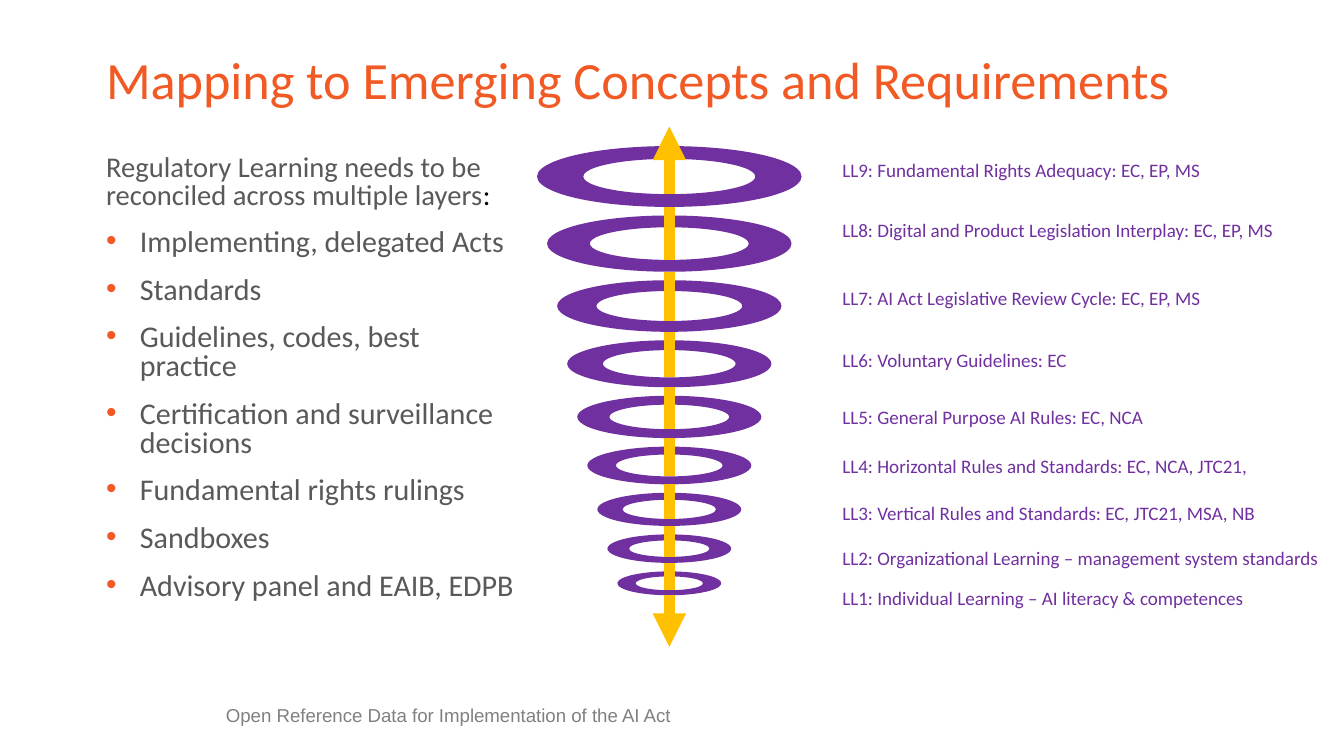
from lxml import etree
from pptx import Presentation
from pptx.dml.color import RGBColor
from pptx.enum.shapes import MSO_CONNECTOR
from pptx.enum.text import MSO_ANCHOR, MSO_AUTO_SIZE, PP_ALIGN
from pptx.oxml.ns import qn
from pptx.util import Cm, Pt

STRAIGHT = MSO_CONNECTOR.STRAIGHT
LEFT = PP_ALIGN.LEFT
TOP, MIDDLE, BOTTOM = MSO_ANCHOR.TOP, MSO_ANCHOR.MIDDLE, MSO_ANCHOR.BOTTOM
NO_FIT, GROW = MSO_AUTO_SIZE.NONE, MSO_AUTO_SIZE.SHAPE_TO_FIT_TEXT

ORANGE = RGBColor(0xF1, 0x5A, 0x24)
DARK_GREY = RGBColor(0x59, 0x59, 0x59)
GREY = RGBColor(0x80, 0x80, 0x80)
BLACK = RGBColor(0, 0, 0)
PURPLE = RGBColor(0x70, 0x30, 0xA0)
GOLD = RGBColor(0xFF, 0xC0, 0x00)

LAYERS = [
    "Implementing, delegated Acts",
    "Standards",
    "Guidelines, codes, best practice",
    "Certification and surveillance decisions",
    "Fundamental rights rulings",
    "Sandboxes",
    "Advisory panel and EAIB, EDPB",
]

# Top and width in cm, then the text
LEVELS = [
    (2.87, 7.39, "LL9: Fundamental Rights Adequacy: EC, EP, MS"),
    (4.01, 8.92, "LL8: Digital and Product Legislation Interplay: EC, EP, MS"),
    (5.28, 7.42, "LL7: AI Act Legislative Review Cycle: EC, EP, MS"),
    (6.45, 4.83, "LL6: Voluntary Guidelines: EC"),
    (7.54, 6.25, "LL5: General Purpose AI Rules: EC, NCA"),
    (8.46, 8.33, "LL4: Horizontal Rules and Standards: EC, NCA, JTC21,"),
    (9.35, 8.41, "LL3: Vertical Rules and Standards: EC, JTC21, MSA, NB"),
    (10.19, 9.63, "LL2: Organizational Learning – management system standards"),
    (10.95, 8.18, "LL1: Individual Learning – AI literacy & competences"),
]

# Spiral of rings, in cm
AXIS_X = 12.65
RINGS_TOP = 2.76
RING_GAP = 0.16
RING_WIDTH, RING_STEP = 5.0, 0.38
RING_RATIO = 0.23
HOLE_WIDTH, HOLE_HEIGHT = 0.65, 0.58
ARROW_TOP, ARROW_BOTTOM = 2.39, 12.22


def place(s, left, top, width, height):
    s.left, s.top, s.width, s.height = Cm(left), Cm(top), Cm(width), Cm(height)


def style(font, size, color, name="Calibri"):
    font.size, font.name, font.color.rgb = Pt(size), name, color
    font.bold = False


def set_bullet(p, char=None):
    pPr = p._p.get_or_add_pPr()
    indent = Cm(0.64) if char else 0
    pPr.set("marL", str(indent))
    pPr.set("indent", str(-indent))
    if not char:
        etree.SubElement(pPr, qn("a:buNone"))
        return
    color = etree.SubElement(pPr, qn("a:buClr"))
    etree.SubElement(color, qn("a:srgbClr"), val=str(ORANGE))
    etree.SubElement(pPr, qn("a:buFont"), typeface="Arial")
    etree.SubElement(pPr, qn("a:buChar"), char=char)


def format_paragraph(p, line_spacing, before=0, bullet=None):
    p.alignment = LEFT
    p.line_spacing = line_spacing
    p.space_before, p.space_after = Pt(before), Pt(0)
    set_bullet(p, bullet)


def fill_line(s, text, size, color, anchor, name="Calibri"):
    tf = s.text_frame
    tf.text = text
    tf.auto_size, tf.vertical_anchor = NO_FIT, anchor
    p = tf.paragraphs[0]
    format_paragraph(p, 0.9)
    style(p.runs[0].font, size, color, name)


def fill_body(s):
    tf = s.text_frame
    tf.auto_size, tf.vertical_anchor = NO_FIT, TOP
    p = tf.paragraphs[0]
    p.text = "Regulatory Learning needs to be reconciled across multiple layers"
    format_paragraph(p, 0.8)
    style(p.runs[0].font, 15.3, DARK_GREY)
    r = p.add_run()
    r.text = ":"
    style(r.font, 15.3, BLACK)
    for layer in LAYERS:
        p = tf.add_paragraph()
        p.text = layer
        format_paragraph(p, 0.8, 10, "•")
        style(p.runs[0].font, 16.1, DARK_GREY)


def round_corners(s, ellipses):
    """Turn every four straight sides into the quarter arcs of one ellipse."""
    for i, side in enumerate(list(s._element.iter(qn("a:lnTo")))):
        width, height, turn = ellipses[i // 4]
        arc = etree.Element(
            qn("a:arcTo"), wR=str(Cm(width / 2)), hR=str(Cm(height / 2)),
            stAng=str(turn * (i % 4) * 90 % 360 * 60000),
            swAng=str(turn * 90 * 60000))
        side.getparent().replace(side, arc)


def add_ring(shapes, y, width, height):
    """Draw a flat ring; the hole runs the other way round to stay empty."""
    ellipses = [(width, height, 1),
                (width * HOLE_WIDTH, height * HOLE_HEIGHT, -1)]
    builder = shapes.build_freeform(Cm(AXIS_X + width / 2), Cm(y), scale=1.0)
    for w, h, turn in ellipses:
        right = (Cm(AXIS_X + w / 2), Cm(y))
        left = (Cm(AXIS_X - w / 2), Cm(y))
        first = (Cm(AXIS_X), Cm(y + turn * h / 2))
        last = (Cm(AXIS_X), Cm(y - turn * h / 2))
        builder.move_to(*right)
        builder.add_line_segments([first, left, last, right], close=True)
    s = builder.convert_to_shape()
    round_corners(s, ellipses)
    s.shadow.inherit = False
    s.fill.solid()
    s.fill.fore_color.rgb = PURPLE
    s.line.fill.background()


def add_axis_line(shapes, start, end, arrow=False):
    s = shapes.add_connector(STRAIGHT, Cm(AXIS_X), Cm(start), Cm(AXIS_X), Cm(end))
    s.line.color.rgb, s.line.width = GOLD, Pt(6)
    if arrow:
        ln = s._element.spPr.find(qn("a:ln"))
        etree.SubElement(ln, qn("a:tailEnd"), type="triangle")
    etree.SubElement(s._element.spPr, qn("a:effectLst"))


def add_spiral(slide):
    """Stack the rings, then thread the axis behind each ring's near side."""
    shapes = slide.shapes.add_group_shape().shapes
    top = RINGS_TOP
    rings = []
    for i in range(len(LEVELS)):
        width = RING_WIDTH - i * RING_STEP
        height = width * RING_RATIO
        y = top + height / 2
        add_ring(shapes, y, width, height)
        rings.append((y + height * HOLE_HEIGHT / 2, top + height))
        top += height + RING_GAP
    add_axis_line(shapes, rings[0][0], ARROW_TOP, arrow=True)
    add_axis_line(shapes, rings[-1][1], ARROW_BOTTOM, arrow=True)
    for (_, bottom), (hole_bottom, _) in zip(rings, rings[1:]):
        add_axis_line(shapes, bottom, hole_bottom)


def add_label(slide, top, width, text):
    s = slide.shapes.add_textbox(Cm(15.67), Cm(top), Cm(width), Cm(0.68))
    tf = s.text_frame
    tf.text = text
    tf.word_wrap, tf.auto_size = False, GROW
    style(tf.paragraphs[0].runs[0].font, 10.2, PURPLE)


def main():
    prs = Presentation()
    prs.slide_width, prs.slide_height = Cm(25.4), Cm(14.28)
    slide = prs.slides.add_slide(prs.slide_layouts[3])
    title, body, footer = slide.placeholders

    place(title, 1.75, 0.76, 21.9, 1.6)
    fill_line(title, "Mapping to Emerging Concepts and Requirements", 28, ORANGE, MIDDLE)
    place(body, 1.75, 2.82, 8.36, 10.03)
    fill_body(body)
    place(footer, 4.27, 13.08, 10.13, 0.64)
    fill_line(footer, "Open Reference Data for Implementation of the AI Act",
              10, GREY, BOTTOM, "Arial")
    tf = footer.text_frame
    tf.margin_left = tf.margin_top = tf.margin_right = tf.margin_bottom = 0

    add_spiral(slide)
    for top, width, text in LEVELS:
        add_label(slide, top, width, text)
    prs.save("out.pptx")


if __name__ == "__main__":
    main()
